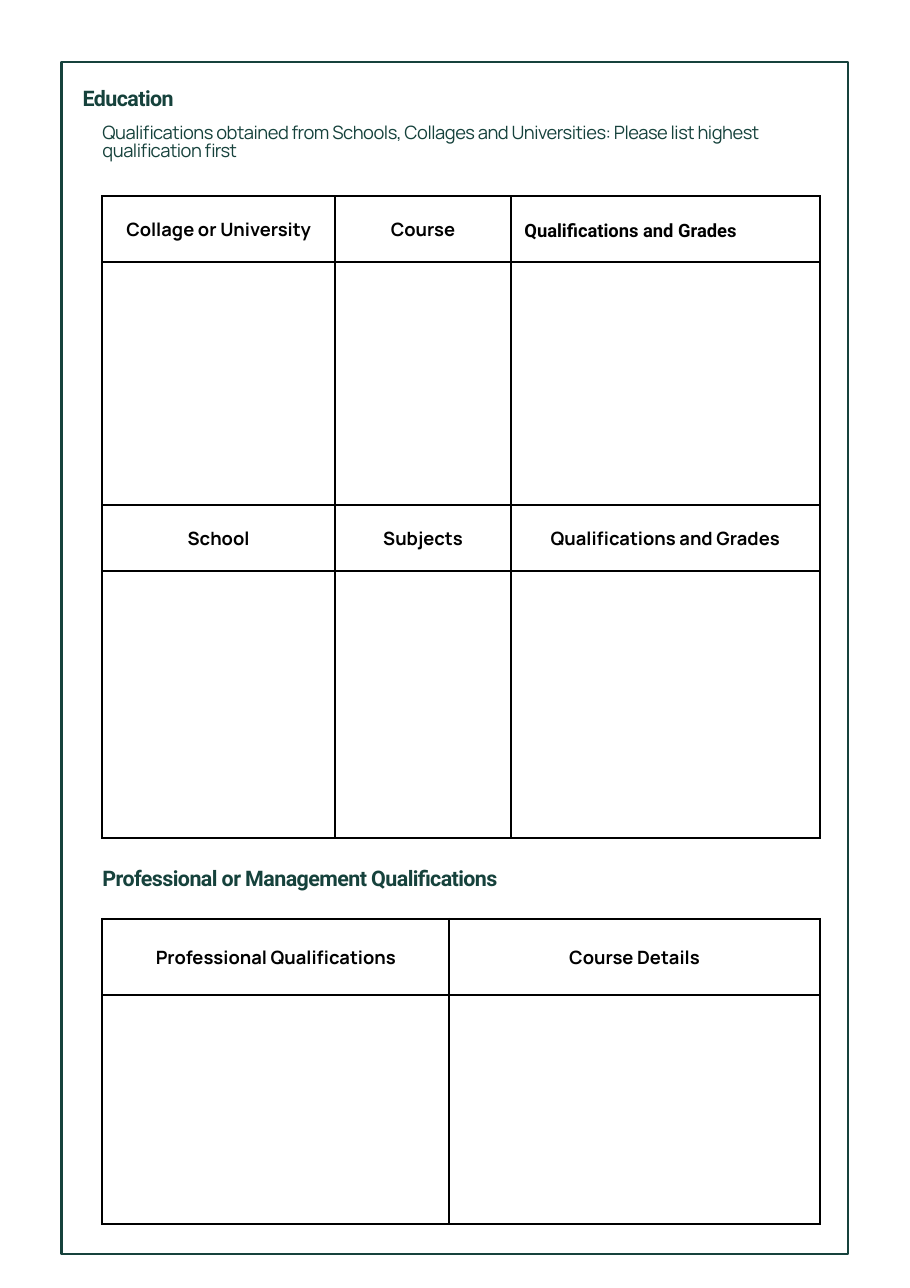
"""Build the education and qualifications page of an application form."""
from lxml import etree
from pptx import Presentation
from pptx.dml.color import RGBColor
from pptx.enum.shapes import MSO_SHAPE
from pptx.enum.text import MSO_ANCHOR, MSO_AUTO_SIZE, PP_ALIGN
from pptx.oxml.ns import qn
from pptx.util import Pt

PX = 9144
LINE_WIDTH = Pt(1.5)
COLORS = {"green": "16423C", "black": "000000"}
BODY_FONT, HEADING_FONT = "Manrope", "Roboto"
RECTANGLE = MSO_SHAPE.RECTANGLE
TOP, MIDDLE = MSO_ANCHOR.TOP, MSO_ANCHOR.MIDDLE
LEFT, CENTER = PP_ALIGN.LEFT, PP_ALIGN.CENTER
NO_AUTOFIT = MSO_AUTO_SIZE.NONE
CELL_MARGIN = 12


def color(name):
    return RGBColor.from_string(COLORS[name])


def style_paragraph(paragraph, font, size, color_name, bold, spacing, align):
    paragraph.font.name = font
    paragraph.font.size = Pt(size)
    paragraph.font.bold = bold
    paragraph.font.color.rgb = color(color_name)
    paragraph.line_spacing = Pt(spacing)
    paragraph.space_before = Pt(0)
    paragraph.alignment = align


def set_margins(target, margin):
    target.margin_left = target.margin_right = margin
    target.margin_top = target.margin_bottom = margin


def fill_text(shape, box, text, font, size, bold, spacing, tracking):
    shape.left, shape.top, shape.width, shape.height = [length * PX for length in box]
    frame = shape.text_frame
    frame.word_wrap = True
    frame.auto_size = NO_AUTOFIT
    frame.vertical_anchor = TOP
    set_margins(frame, 0)
    paragraph = frame.paragraphs[0]
    run = paragraph.add_run()
    run.text = text
    run._r.get_or_add_rPr().set("spc", str(tracking))
    style_paragraph(paragraph, font, size, "green", bold, spacing, LEFT)
    properties = paragraph._p.get_or_add_pPr()
    properties.set("marL", "0")
    properties.set("indent", "0")
    bullet = etree.Element(qn("a:buNone"))
    properties.find(qn("a:spcBef")).addnext(bullet)


def add_heading(shape, box, text):
    fill_text(shape, box, text, HEADING_FONT, 14, True, 14, -40)


def add_frame(slide, left, top, width, height):
    shape = slide.shapes.add_shape(RECTANGLE, left * PX, top * PX, width * PX, height * PX)
    shape.shadow.inherit = False
    shape.fill.background()
    shape.line.color.rgb = color("green")
    shape.line.width = LINE_WIDTH


def set_borders(cell):
    properties = cell._tc.get_or_add_tcPr()
    for side in ("a:lnL", "a:lnR", "a:lnT", "a:lnB"):
        line = etree.SubElement(properties, qn(side), w=str(LINE_WIDTH))
        fill = etree.SubElement(line, qn("a:solidFill"))
        etree.SubElement(fill, qn("a:srgbClr"), val=COLORS["black"])


def add_form_table(slide, left, top, widths, heights, header_rows):
    """Add a bordered table whose header rows alternate with empty rows."""
    graphic = slide.shapes.add_table(len(heights), len(widths), left * PX, top * PX,
                                     sum(widths) * PX, sum(heights) * PX)
    table = graphic.table
    table.first_row = table.horz_banding = False
    for column, width in zip(table.columns, widths):
        column.width = width * PX
    for row, height in zip(table.rows, heights):
        row.height = height * PX
    for cell in table.iter_cells():
        set_borders(cell)
        cell.fill.background()
        set_margins(cell, CELL_MARGIN * PX)
        cell.vertical_anchor = MIDDLE
    for index, headers in enumerate(header_rows):
        for column, (text, font, align) in enumerate(headers):
            cell = table.cell(index * 2, column)
            cell.text = text
            style_paragraph(cell.text_frame.paragraphs[0], font, 12, "black", True, 16.8, align)


def centered(*labels):
    return [(label, BODY_FONT, CENTER) for label in labels]


def main():
    presentation = Presentation()
    presentation.slide_width, presentation.slide_height = 826 * PX, 1169 * PX
    slide = presentation.slides.add_slide(presentation.slide_layouts[1])

    add_frame(slide, 56, 56, 714, 1082)
    add_heading(slide.shapes.title, (75, 81, 215, 24), "Education")
    fill_text(slide.placeholders[1], (93, 113, 631, 36),
              "Qualifications obtained from Schools, Collages and Universities: "
              "Please list highest qualification first",
              BODY_FONT, 12, False, 12, -30)

    college_headers = centered("Collage or University", "Course")
    college_headers.append(("Qualifications and Grades", HEADING_FONT, LEFT))
    school_headers = centered("School", "Subjects", "Qualifications and Grades")
    add_form_table(slide, 93, 178, (211, 160, 280), (60, 220, 60, 243),
                   [college_headers, school_headers])

    subheading = slide.shapes.add_textbox(0, 0, 0, 0)
    add_heading(subheading, (93, 789, 459, 24), "Professional or Management Qualifications")
    add_form_table(slide, 93, 834, (315, 336), (69, 208),
                   [centered("Professional Qualifications", "Course Details")])

    presentation.save("out.pptx")


if __name__ == "__main__":
    main()
